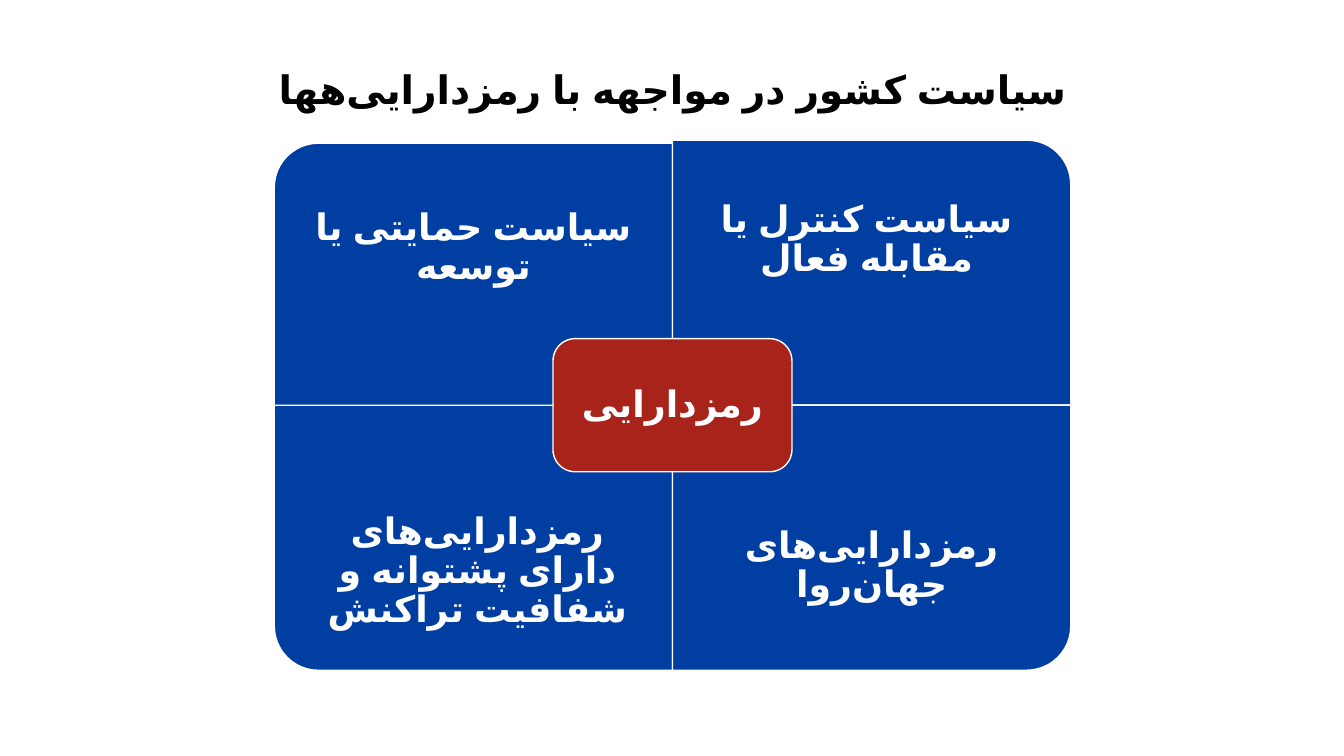
from pptx import Presentation
from pptx.dml.color import RGBColor
from pptx.enum.shapes import MSO_SHAPE as Shape
from pptx.enum.text import MSO_ANCHOR as Anchor, PP_ALIGN as Align
from pptx.oxml.ns import qn
from pptx.util import Emu, Pt
from lxml.etree import SubElement

PX = 9144  # 100 px to the inch
HALF_SPACE = chr(0x200C)  # Persian zero-width non-joiner
ASSETS = f"رمزدارایی{HALF_SPACE}های"


def px(length):
    return Emu(round(length * PX))


def color(value):
    return RGBColor.from_string(value)


class PolicySlide:
    font = "Arial"
    blue, red, white, black = "003EA2", "A82319", "FFFFFF", "000000"

    def __init__(self, presentation):
        self.slide = presentation.slides.add_slide(presentation.slide_layouts[6])

    def block(self, kind, center_x, center_y, width, height, fill, turn=0):
        """Filled shape placed by its centre; width and height are before turning."""
        shape = self.slide.shapes.add_shape(
            kind, px(center_x - width / 2), px(center_y - height / 2), px(width), px(height))
        shape.rotation = turn
        shape.shadow.inherit = False
        shape.fill.solid()
        shape.fill.fore_color.rgb = color(fill)
        shape.line.color.rgb = color(self.white)
        shape.line.width = Pt(1)

    def label(self, text, left, top, width, height, inset=20, size=26, ink=white):
        """Bold, centred right-to-left text."""
        box = self.slide.shapes.add_textbox(px(left), px(top), px(width), px(height))
        frame = box.text_frame
        frame.word_wrap = True
        frame.vertical_anchor = Anchor.MIDDLE
        frame.margin_left = frame.margin_right = px(inset)
        frame.margin_top = frame.margin_bottom = px(inset)
        paragraph = frame.paragraphs[0]
        paragraph.alignment = Align.CENTER
        paragraph.line_spacing = 0.9
        paragraph._p.get_or_add_pPr().set("rtl", "1")
        run = paragraph.add_run()
        run.text = text
        run.font.name = self.font
        run.font.size = Pt(size)
        run.font.bold = True
        run.font.color.rgb = color(ink)
        properties = run._r.get_or_add_rPr()
        properties.set("lang", "fa-IR")
        SubElement(properties, qn("a:cs")).set("typeface", self.font)


def main():
    presentation = Presentation()
    presentation.slide_width, presentation.slide_height = px(1333), px(750)
    policy = PolicySlide(presentation)

    # Four quadrants around the centre, each with its rounded corner outwards
    middle_x, middle_y, width, height = 667, 402, 395, 263
    quadrants = [  # column, row, turn, drop, text, text box
        (-1, -1, 270, 3, "سیاست حمایتی یا توسعه", (272, 152, 395, 188)),
        (1, -1, 0, 0, "سیاست کنترل یا مقابله فعال", (667, 139, 385, 198)),
        (-1, 1, 180, 0, f"{ASSETS} دارای پشتوانه و شفافیت تراکنش", (281, 468, 385, 198)),
        (1, 1, 90, 0, f"{ASSETS} جهان{HALF_SPACE}روا", (667, 468, 395, 188)),
    ]
    for column, row, turn, drop, text, text_box in quadrants:
        size = (height, width) if turn in (90, 270) else (width, height)
        policy.block(Shape.ROUND_1_RECTANGLE, middle_x + column * width / 2,
                     middle_y + row * height / 2 + drop, *size, policy.blue, turn)
        policy.label(text, *text_box)

    # Central topic
    policy.block(Shape.ROUNDED_RECTANGLE, middle_x, middle_y, 237, 132, policy.red)
    policy.label("رمزدارایی", 555, 343, 224, 119, inset=11)

    # Title
    policy.label(f"سیاست کشور در مواجهه با {ASSETS[:-2]}ها", 92, 40, 1150, 102,
                 inset=5, size=28, ink=policy.black)

    presentation.save("out.pptx")


if __name__ == "__main__":
    main()
